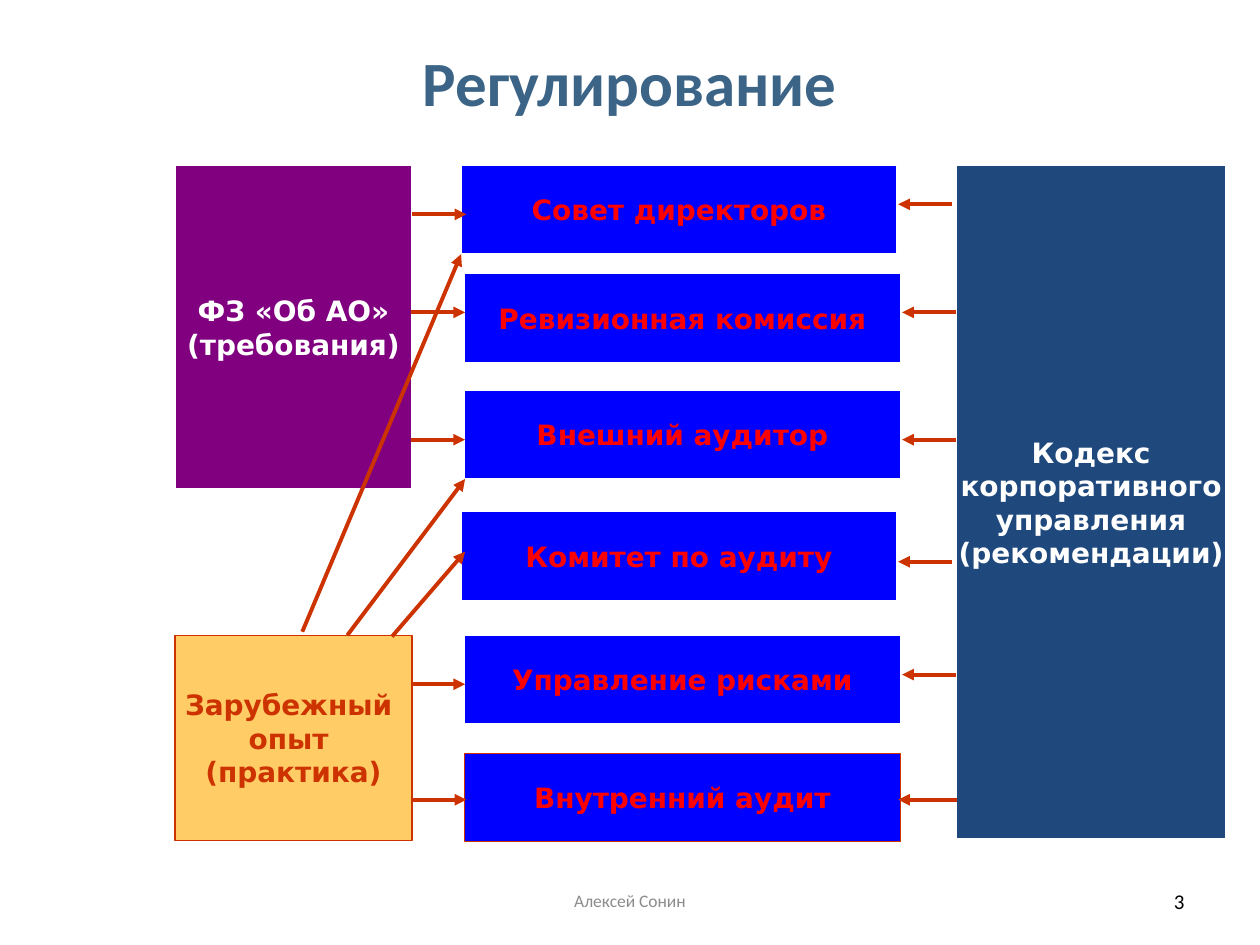
from lxml import etree
from pptx import Presentation, util as u
from pptx.dml.color import RGBColor
from pptx.enum import shapes, text
from pptx.oxml.ns import qn

WHITE = RGBColor(0xFF, 0xFF, 0xFF)
BLACK = RGBColor(0, 0, 0)
GREY = RGBColor(0x8C, 0x8C, 0x8C)
STEEL = RGBColor(0x3C, 0x64, 0x87)
PURPLE = RGBColor(0x80, 0, 0x80)
NAVY = RGBColor(0x1F, 0x49, 0x7D)
BLUE = RGBColor(0, 0, 0xFF)
RED = RGBColor(0xFF, 0, 0)
RUST = RGBColor(0xCC, 0x33, 0)
SAND = RGBColor(0xFF, 0xCC, 0x66)

# Lines, (left, top, width, height), fill, edge, ink
SOURCES = [
    (["ФЗ «Об АО»", "(требования)"], (100, 94.5, 135.5, 185), PURPLE, WHITE, WHITE),
    (["Кодекс", "корпоративного", "управления", "(рекомендации)"],
     (546.5, 94.5, 154, 385), NAVY, WHITE, WHITE),
    (["Зарубежный ", "опыт ", "(практика)"], (100, 363, 135.5, 117.5), SAND, RUST, RUST),
]
# Name, left, top, edge
BODIES = [
    ("Совет директоров", 263.5, 94.5, WHITE),
    ("Ревизионная комиссия", 265.5, 156.5, WHITE),
    ("Внешний аудитор", 265.5, 223, WHITE),
    ("Комитет по аудиту", 263.5, 292.5, WHITE),
    ("Управление рисками", 265.5, 363, WHITE),
    ("Внутренний аудит", 265.5, 430.5, RUST),
]
BODY_W, BODY_H = 249, 50.5
# Level arrows: start, end, heights
LEVEL = [
    (235, 265.75, [178.5, 251.25, 391]),
    (235.5, 266.5, [122.5, 457]),
    (546.5, 515.5, [178.5, 251.25, 385.5]),
    (544.25, 513.25, [116.75, 321]),
    (547, 513.25, [457]),
]
# Slanted arrows: from x, y, to x, y
SLANTED = [
    (172.75, 361, 263.5, 145.25),
    (198.5, 363, 265.75, 273.75),
    (224, 363.75, 265.75, 315.25),
]
# Words, (left, top, width, height), size, ink, bold, alignment, anchor
MID, TOP = text.MSO_ANCHOR.MIDDLE, text.MSO_ANCHOR.TOP
CENTER, RIGHT = text.PP_ALIGN.CENTER, text.PP_ALIGN.RIGHT
LABELS = [
    ("Регулирование", (36, 21.5, 648, 67), 36, STEEL, True, CENTER, TOP),
    ("3", (516, 500.5, 168, 28.75), 12, BLACK, False, RIGHT, MID),
    ("Алексей Сонин", (246, 500.5, 228, 28.75), 10, GREY, False, CENTER, MID),
]


def pts(vals):
    return [u.Pt(v) for v in vals]


def write(frame, lines, face, size, ink, bold, align, anchor):
    frame.vertical_anchor = anchor
    for i, line in enumerate(lines):
        para = frame.add_paragraph() if i else frame.paragraphs[0]
        para.text = line
        para.alignment = align
        font = para.font
        font.name, font.size, font.bold = face, u.Pt(size), bold
        font.color.rgb = ink


def add_box(slide, lines, area, fill, edge, ink):
    box = slide.shapes.add_shape(shapes.MSO_SHAPE.RECTANGLE, *pts(area))
    box.shadow.inherit = False
    box.fill.solid()
    box.fill.fore_color.rgb = fill
    box.line.color.rgb = edge
    box.line.width = u.Pt(0.75)
    box.text_frame.word_wrap = False
    write(box.text_frame, lines, "DejaVu Sans", 16, ink, True, CENTER, MID)


def add_arrow(slide, *ends):
    arrow = slide.shapes.add_connector(shapes.MSO_CONNECTOR.STRAIGHT, *pts(ends))
    arrow.line.color.rgb = RUST
    arrow.line.width = u.Pt(2.25)
    etree.SubElement(arrow.line._get_or_add_ln(), qn("a:tailEnd"), type="triangle")
    etree.SubElement(arrow._element.spPr, qn("a:effectLst"))


def main():
    deck = Presentation()
    deck.slide_width, deck.slide_height = pts((720, 540))
    slide = deck.slides.add_slide(deck.slide_layouts[6])
    for source in SOURCES:
        add_box(slide, *source)
    for name, left, top, edge in BODIES:
        add_box(slide, [name], (left, top, BODY_W, BODY_H), BLUE, edge, RED)
    for start, end, rows in LEVEL:
        for y in rows:
            add_arrow(slide, start, y, end, y)
    for ends in SLANTED:
        add_arrow(slide, *ends)
    for words, area, *style in LABELS:
        frame = slide.shapes.add_textbox(*pts(area)).text_frame
        frame.word_wrap = True
        write(frame, [words], "Calibri", *style)
    deck.save("out.pptx")


if __name__ == "__main__":
    main()
